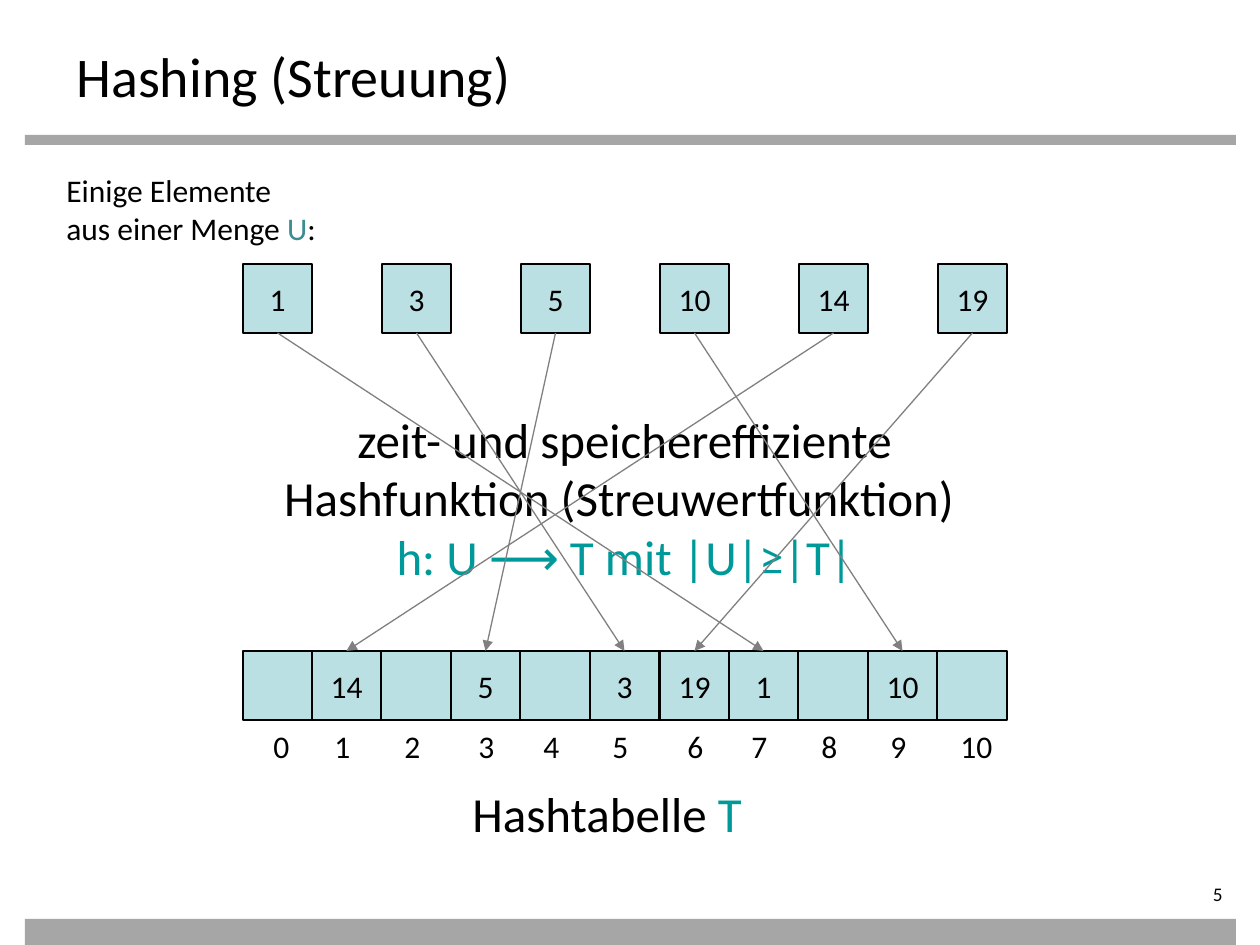
from dataclasses import dataclass

import pptx
import pptx.dml.color
import pptx.enum.shapes
import pptx.enum.text
import pptx.oxml.ns
import pptx.util
from lxml import etree

EMU_PER_PX = 914400 / 126
Align = pptx.enum.text.PP_ALIGN
Anchor = pptx.enum.text.MSO_ANCHOR
Shape = pptx.enum.shapes.MSO_SHAPE


@dataclass(frozen=True)
class Theme:
    font: str = "Calibri"
    symbol_font: str = "Lato"
    ink: str = "000000"
    teal: str = "009999"
    set_name: str = "3C8C93"
    cell: str = "BBE0E3"
    bar: str = "A6A6A6"
    arrow: str = "808080"
    title: int = 32
    statement: int = 28
    body: int = 18
    page: int = 11
    line: float = 0.75


@dataclass(frozen=True)
class Rect:
    left: int
    top: int
    width: int
    height: int


@dataclass(frozen=True)
class Span:
    text: str
    color: str = Theme.ink
    font: str = Theme.font


@dataclass(frozen=True)
class Entry:
    key: int
    slot: int


THEME = Theme()
ENTRIES = [Entry(1, 7), Entry(3, 5), Entry(5, 3),
           Entry(10, 9), Entry(14, 1), Entry(19, 6)]
SLOTS = 11
TABLE = Rect(243, 651, 764, 69)
KEYS_TOP = 264
CELL = 69
LABEL_INSET = 10
LABEL_NUDGE = {0: 8, 3: 5, 6: 5}


def px(length: int) -> int:
    return round(length * EMU_PER_PX)


def bounds(rect: Rect) -> tuple[int, int, int, int]:
    return px(rect.left), px(rect.top), px(rect.width), px(rect.height)


def rgb(color: str) -> pptx.dml.color.RGBColor:
    return pptx.dml.color.RGBColor.from_string(color)


def write(shape, *spans: Span, size: int = THEME.body, align=Align.LEFT,
          anchor=Anchor.TOP, wrap: bool = False) -> None:
    frame = shape.text_frame
    frame.word_wrap = wrap
    frame.vertical_anchor = anchor
    para = frame.paragraphs[0]
    para.alignment = align
    for span in spans:
        for number, line in enumerate(span.text.split("\n")):
            if number:
                para.add_line_break()
            if line:
                run = para.add_run()
                run.text = line
                run.font.name = span.font
                run.font.size = pptx.util.Pt(size)
                run.font.color.rgb = rgb(span.color)


def add_text(page, rect: Rect, *spans: Span, **style):
    box = page.shapes.add_textbox(*bounds(rect))
    write(box, *spans, **style)
    return box


def add_block(page, rect: Rect, fill: str, outline: str | None = None):
    block = page.shapes.add_shape(Shape.RECTANGLE, *bounds(rect))
    block.shadow.inherit = False
    block.fill.solid()
    block.fill.fore_color.rgb = rgb(fill)
    if outline:
        block.line.color.rgb = rgb(outline)
        block.line.width = pptx.util.Pt(THEME.line)
    else:
        block.line.fill.background()
    return block


def slot_left(slot: int) -> int:
    return TABLE.left + round(slot * TABLE.width / SLOTS)


def add_cell(page, slot: int, top: int, key: int):
    cell = add_block(page, Rect(slot_left(slot), top, CELL, CELL),
                     THEME.cell, THEME.ink)
    write(cell, Span(str(key)), align=Align.CENTER, anchor=Anchor.MIDDLE)
    return cell


def add_arrow(page, source, target) -> None:
    arrow = page.shapes.add_connector(
        pptx.enum.shapes.MSO_CONNECTOR.STRAIGHT, 0, 0, 0, 0)
    arrow.begin_connect(source, 2)
    arrow.end_connect(target, 0)
    arrow.line.color.rgb = rgb(THEME.arrow)
    arrow.line.width = pptx.util.Pt(THEME.line)
    tail = etree.SubElement(arrow.line._get_or_add_ln(),
                            pptx.oxml.ns.qn("a:tailEnd"))
    tail.set("type", "triangle")
    etree.SubElement(arrow._element.spPr, pptx.oxml.ns.qn("a:effectLst"))


def add_frame(page) -> None:
    add_block(page, Rect(25, 135, 1211, 10), THEME.bar)
    add_block(page, Rect(25, 919, 1211, 26), THEME.bar)
    number = add_text(page, Rect(1096, 882, 139, 28), Span("5"),
                      size=THEME.page, align=Align.RIGHT, wrap=True)
    number.text_frame.margin_left = 0
    number.text_frame.margin_top = number.text_frame.margin_bottom = 0
    add_text(page, Rect(64, 35, 1134, 69), Span("Hashing (Streuung)"),
             size=THEME.title, wrap=True)


def add_hashing(page) -> None:
    keys = [add_cell(page, 2 * place, KEYS_TOP, entry.key)
            for place, entry in enumerate(ENTRIES)]
    add_block(page, TABLE, THEME.cell, THEME.ink)
    slots = [add_cell(page, entry.slot, TABLE.top, entry.key)
             for entry in ENTRIES]
    add_text(page, Rect(460, 777, 305, 72), Span("Hashtabelle "),
             Span("T", THEME.teal), size=THEME.statement)
    add_text(page, Rect(265, 403, 719, 190),
             Span("zeit- und speichereffiziente\n"
                  "Hashfunktion (Streuwertfunktion) \n"),
             Span("h: U ", THEME.teal),
             Span("⟶", THEME.teal, THEME.symbol_font),
             Span(" T mit |U|≥|T|", THEME.teal),
             size=THEME.statement, align=Align.CENTER)
    for source, target in zip(keys, slots):
        add_arrow(page, source, target)
    for slot in range(SLOTS):
        left = slot_left(slot) + LABEL_INSET + LABEL_NUDGE.get(slot, 0)
        width = 58 if slot >= 10 else 42
        add_text(page, Rect(left, 721, width, 50), Span(str(slot)))
    add_text(page, Rect(54, 165, 278, 89),
             Span("Einige Elemente\naus einer Menge "),
             Span("U", THEME.set_name), Span(":"))


def main() -> None:
    deck = pptx.Presentation()
    deck.slide_width, deck.slide_height = px(1260), px(945)
    page = deck.slides.add_slide(deck.slide_layouts[6])
    add_frame(page)
    add_hashing(page)
    deck.save("out.pptx")


if __name__ == "__main__":
    main()
